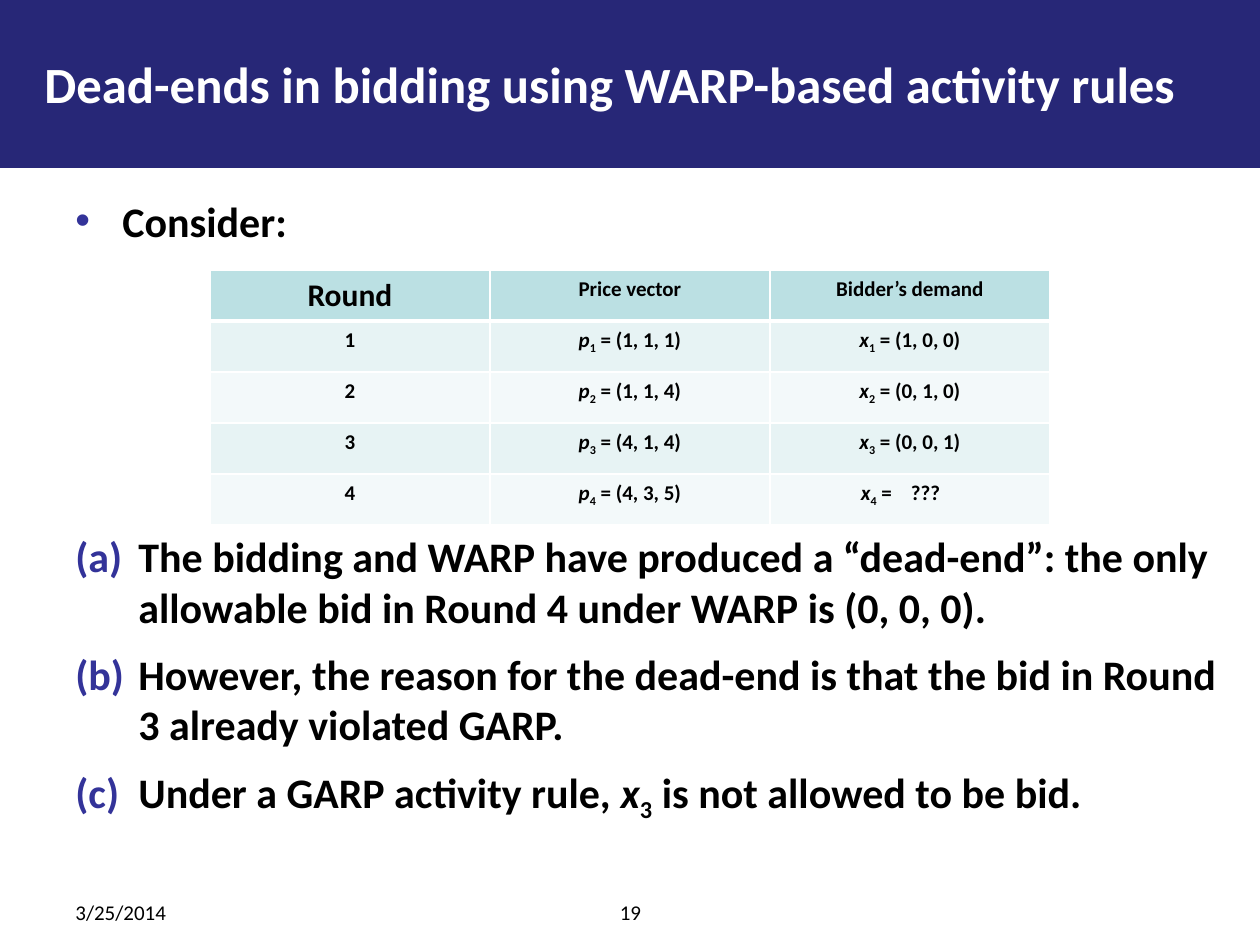
from lxml.etree import SubElement, Element
from pptx import Presentation
from pptx.dml.color import RGBColor
from pptx.enum.shapes import MSO_SHAPE as Shape
from pptx.enum.text import MSO_ANCHOR as Anchor, PP_ALIGN as Align
from pptx.oxml.ns import qn
from pptx.util import Emu, Pt

PX = 914400 // 126
FONT = "Calibri"
NAVY = RGBColor(0x27, 0x27, 0x77)
INDIGO = RGBColor(0x33, 0x33, 0x99)
WHITE = RGBColor(0xFF, 0xFF, 0xFF)
BLACK = RGBColor(0, 0, 0)
HEADER_TEAL = RGBColor(0xBB, 0xE0, 0xE3)
BAND_FILLS = [RGBColor(0xE7, 0xF3, 0xF4), RGBColor(0xF3, 0xF9, 0xFA)]

PLAIN = {"name": FONT, "size": Pt(12), "bold": False}
CELL = {"name": FONT, "size": Pt(12), "bold": True}
ROUND_HEAD = {**CELL, "size": Pt(18)}
BODY = {**CELL, "size": Pt(24)}
TITLE = {**CELL, "size": Pt(29)}

HEADERS = ["Round", "Price vector", "Bidder’s demand"]
ROUNDS = [
    ("(1, 1, 1)", "(1, 0, 0)"),
    ("(1, 1, 4)", "(0, 1, 0)"),
    ("(4, 1, 4)", "(0, 0, 1)"),
    ("(4, 3, 5)", "\t???"),
]


def px(length):
    return Emu(length * PX)


def indexed(symbol, index, rest):
    """Runs for an italic symbol with a subscript, then plain text."""
    return [(symbol, "italic"), (str(index), "sub"), (rest, "")]


def write(paragraph, runs, style, color=BLACK, align=Align.LEFT):
    paragraph.alignment = align
    for text, kind in runs:
        run = paragraph.add_run()
        run.text = text
        for key, value in style.items():
            setattr(run.font, key, value)
        run.font.color.rgb = color
        run.font.italic = kind == "italic"
        if kind == "sub":
            run._r.get_or_add_rPr().set("baseline", "-25000")


def add_text_frame(slide, left, top, width, height, anchor=Anchor.TOP):
    box = slide.shapes.add_textbox(px(left), px(top), px(width), px(height))
    frame = box.text_frame
    frame.word_wrap = True
    frame.vertical_anchor = anchor
    return frame


def set_bullet(paragraph, indent, tag, **marker):
    props = paragraph._p.get_or_add_pPr()
    props.set("marL", str(px(indent)))
    props.set("indent", str(-px(indent)))
    color = SubElement(props, qn("a:buClr"))
    SubElement(color, qn("a:srgbClr"), val=str(INDIGO))
    SubElement(props, qn("a:buFont"), typeface=FONT if tag == "a:buAutoNum" else "Arial")
    SubElement(props, qn(tag), **marker)


def set_borders(cell, top, bottom):
    props = cell._tc.get_or_add_tcPr()
    widths = {"L": 1, "R": 1, "T": top, "B": bottom}
    for place, (side, width) in enumerate(widths.items()):
        line = Element(qn(f"a:ln{side}"), w=str(Pt(width)))
        fill = SubElement(line, qn("a:solidFill"))
        SubElement(fill, qn("a:srgbClr"), val=str(WHITE))
        props.insert(place, line)


def align_at_tab(cell, margin, stop):
    """Start the text at a margin and set its tab stop."""
    cell.margin_left = px(margin)
    paragraph = cell.text_frame.paragraphs[0]
    paragraph.alignment = Align.LEFT
    tabs = SubElement(paragraph._p.get_or_add_pPr(), qn("a:tabLst"))
    SubElement(tabs, qn("a:tab"), pos=str(px(stop)), algn="l")


def add_title(slide):
    band = slide.shapes.add_shape(Shape.RECTANGLE, 0, 0, px(1260), px(168))
    band.shadow.inherit = False
    band.fill.solid()
    band.fill.fore_color.rgb = NAVY
    band.line.fill.background()
    frame = add_text_frame(slide, 32, 20, 1207, 126, Anchor.MIDDLE)
    heading = "Dead-ends in bidding using WARP-based activity rules"
    write(frame.paragraphs[0], [(heading, "")], TITLE, WHITE)


def add_body(slide):
    frame = add_text_frame(slide, 63, 189, 1166, 680)
    intro = frame.paragraphs[0]
    write(intro, [("Consider:", "")], BODY)
    set_bullet(intro, 47, "a:buChar", char="•")

    points = [
        [("The bidding and WARP have produced a “dead-end”: the only "
          "allowable bid in Round 4 under WARP is (0, 0, 0).", "")],
        [("However, the reason for the dead-end is that the bid in "
          "Round 3 already violated GARP.", "")],
        [("Under a GARP activity rule, ", ""),
         *indexed("x", 3, " is not allowed to be bid.")],
    ]
    for number, runs in enumerate(points):
        point = frame.add_paragraph()
        write(point, runs, BODY)
        # The first point leaves room for the table
        point.space_before = Pt(9.6) if number else Pt(163)
        set_bullet(point, 63, "a:buAutoNum", type="alphaLcParenBoth")


def add_bid_table(slide):
    rows = [[[(head, "")] for head in HEADERS]]
    for number, (price, demand) in enumerate(ROUNDS, 1):
        gap = "" if demand.startswith("\t") else " "
        rows.append([[(str(number), "")],
                     indexed("p", number, f" = {price}"),
                     indexed("x", number, f" ={gap}{demand}")])

    table = slide.shapes.add_table(len(rows), len(HEADERS), px(210), px(270),
                                   px(840), px(255)).table
    for r, row in enumerate(rows):
        table.rows[r].height = px(51)
        for c, runs in enumerate(row):
            cell = table.cell(r, c)
            style = ROUND_HEAD if (r, c) == (0, 0) else CELL
            write(cell.text_frame.paragraphs[0], runs, style, align=Align.CENTER)
            cell.fill.solid()
            cell.fill.fore_color.rgb = BAND_FILLS[(r - 1) % 2] if r else HEADER_TEAL
            set_borders(cell, top=3 if r == 1 else 1, bottom=1 if r else 3)
    align_at_tab(table.cell(4, 2), 91, 50)


def add_footer(slide):
    for text, left, align in [("3/25/2014", 63, Align.LEFT), ("19", 483, Align.CENTER)]:
        frame = add_text_frame(slide, left, 893, 295, 33)
        write(frame.paragraphs[0], [(text, "")], PLAIN, align=align)


def main():
    deck = Presentation()
    deck.slide_width, deck.slide_height = px(1260), px(945)
    slide = deck.slides.add_slide(deck.slide_layouts[6])
    add_title(slide)
    add_body(slide)
    add_bid_table(slide)
    add_footer(slide)
    deck.save("out.pptx")


if __name__ == "__main__":
    main()
